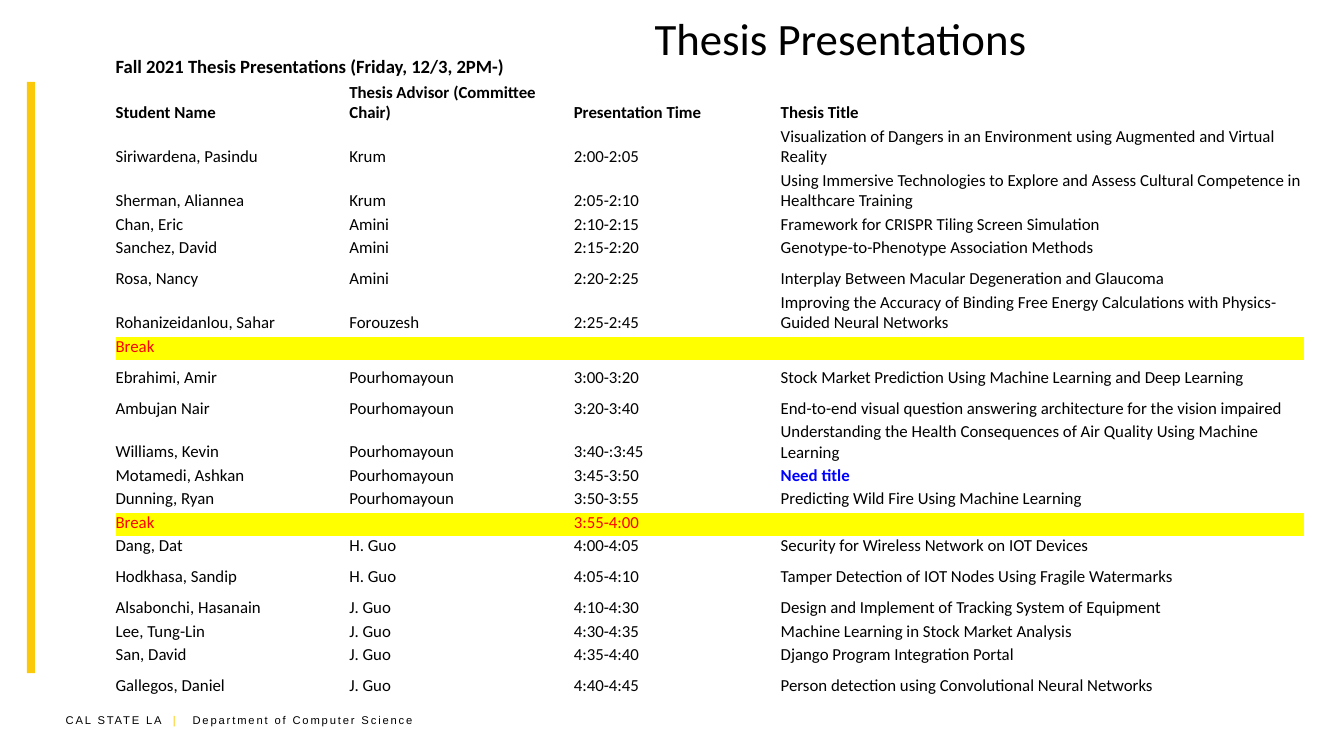
from lxml.etree import SubElement
from pptx import Presentation
from pptx.dml.color import RGBColor
from pptx.enum.shapes import MSO_SHAPE
from pptx.enum.text import MSO_ANCHOR, MSO_AUTO_SIZE, PP_ALIGN
from pptx.oxml.ns import qn
from pptx.util import Inches, Pt

BLACK, GOLD, YELLOW, RED, BLUE = "000000", "FCC90A", "FFFF00", "FF0000", "0000FF"
NO_STYLE_NO_GRID = "{2D5ABB26-0587-4C30-8999-92F81FD0307C}"
COLUMN_WIDTHS = [1.74, 1.67, 1.54, 3.89]
SHORT, MEDIUM, TALL = 0.13, 0.23, 0.33

CAPTION = "Fall 2021 Thesis Presentations (Friday, 12/3, 2PM-)"
HEADINGS = ["Student Name", "Thesis Advisor (Committee Chair)", "Presentation Time", "Thesis Title"]
MISSING_TITLE = "Need title"
# Row height, student, advisor, time, thesis title
SCHEDULE = [
    (MEDIUM, "Siriwardena, Pasindu", "Krum", "2:00-2:05",
     "Visualization of Dangers in an Environment using Augmented and Virtual Reality"),
    (TALL, "Sherman, Aliannea", "Krum", "2:05-2:10",
     "Using Immersive Technologies to Explore and Assess Cultural Competence in Healthcare Training"),
    (SHORT, "Chan, Eric", "Amini", "2:10-2:15", "Framework for CRISPR Tiling Screen Simulation"),
    (SHORT, "Sanchez, David", "Amini", "2:15-2:20", "Genotype-to-Phenotype Association Methods"),
    (MEDIUM, "Rosa, Nancy", "Amini", "2:20-2:25", "Interplay Between Macular Degeneration and Glaucoma"),
    (TALL, "Rohanizeidanlou, Sahar", "Forouzesh", "2:25-2:45",
     "Improving the Accuracy of Binding Free Energy Calculations with Physics-Guided Neural Networks"),
    (SHORT, "Break", "", "", ""),
    (MEDIUM, "Ebrahimi, Amir", "Pourhomayoun", "3:00-3:20",
     "Stock Market Prediction Using Machine Learning and Deep Learning"),
    (MEDIUM, "Ambujan Nair", "Pourhomayoun", "3:20-3:40",
     "End-to-end visual question answering architecture for the vision impaired"),
    (MEDIUM, "Williams, Kevin", "Pourhomayoun", "3:40-:3:45",
     "Understanding the Health Consequences of Air Quality Using Machine Learning"),
    (SHORT, "Motamedi, Ashkan", "Pourhomayoun", "3:45-3:50", MISSING_TITLE),
    (SHORT, "Dunning, Ryan", "Pourhomayoun", "3:50-3:55", "Predicting Wild Fire Using Machine Learning"),
    (SHORT, "Break", "", "3:55-4:00", ""),
    (SHORT, "Dang, Dat", "H. Guo", "4:00-4:05", "Security for Wireless Network on IOT Devices"),
    (MEDIUM, "Hodkhasa, Sandip", "H. Guo", "4:05-4:10",
     "Tamper Detection of IOT Nodes Using Fragile Watermarks"),
    (MEDIUM, "Alsabonchi, Hasanain", "J. Guo", "4:10-4:30",
     "Design and Implement of Tracking System of Equipment"),
    (SHORT, "Lee, Tung-Lin", "J. Guo", "4:30-4:35", "Machine Learning in Stock Market Analysis"),
    (SHORT, "San, David", "J. Guo", "4:35-4:40", "Django Program Integration Portal"),
    (MEDIUM, "Gallegos, Daniel", "J. Guo", "4:40-4:45",
     "Person detection using Convolutional Neural Networks"),
]


def color(hex_string):
    return RGBColor.from_string(hex_string)


def format_run(run, size, hex_string=BLACK, bold=False, name="Calibri"):
    font = run.font
    font.name, font.size, font.bold = name, Pt(size), bold
    font.color.rgb = color(hex_string)


def add_title(slide):
    title = slide.shapes.title
    title.left, title.top = Inches(4.77), Inches(0.03)
    title.width, title.height = Inches(3), Inches(0.5)
    frame = title.text_frame
    frame.text = "Thesis Presentations"
    frame.word_wrap = False
    frame.auto_size = MSO_AUTO_SIZE.NONE
    frame.vertical_anchor = MSO_ANCHOR.TOP
    paragraph = frame.paragraphs[0]
    paragraph.alignment = PP_ALIGN.LEFT
    format_run(paragraph.runs[0], 24)


def add_side_bar(slide):
    bar = slide.shapes.add_shape(
        MSO_SHAPE.RECTANGLE, Inches(0.2), Inches(0.61), Inches(0.06), Inches(4.4))
    bar.shadow.inherit = False
    bar.fill.solid()
    bar.fill.fore_color.rgb = color(GOLD)
    bar.line.fill.background()


def add_footer(slide):
    box = slide.shapes.add_textbox(Inches(0.39), Inches(5.26), Inches(2.92), Inches(0.2))
    box.text_frame.word_wrap = True
    paragraph = box.text_frame.paragraphs[0]
    for text, hex_string in [("CAL STATE LA ", BLACK), (" |   ", GOLD),
                             ("Department of Computer Science", BLACK)]:
        run = paragraph.add_run()
        run.text = text
        format_run(run, 6, hex_string, name="Arial")
        run.font._element.set("spc", "100")


def fill_cell(cell, text, size=9, hex_string=BLACK, bold=False, background=None):
    cell.margin_left = cell.margin_right = cell.margin_top = 0
    cell.margin_bottom = Pt(1.75)
    cell.vertical_anchor = MSO_ANCHOR.BOTTOM
    if background:
        cell.fill.solid()
        cell.fill.fore_color.rgb = color(background)
    else:
        cell.fill.background()
    paragraph = cell.text_frame.paragraphs[0]
    if text:
        paragraph.text = text
        format_run(paragraph.runs[0], size, hex_string, bold)
    else:
        # An empty cell keeps its row low only with a small end-of-paragraph size
        SubElement(paragraph._p, qn("a:endParaRPr")).set("sz", str(size * 100))


def add_schedule(slide):
    heights = [0.25, TALL] + [row[0] for row in SCHEDULE]
    frame = slide.shapes.add_table(
        len(heights), len(COLUMN_WIDTHS), Inches(0.86), Inches(0.36),
        Inches(sum(COLUMN_WIDTHS)), Inches(sum(heights)))
    table = frame.table
    table.first_row = table.horz_banding = False
    table._tbl.tblPr.find(qn("a:tableStyleId")).text = NO_STYLE_NO_GRID
    for column, width in zip(table.columns, COLUMN_WIDTHS):
        column.width = Inches(width)
    for row, height in zip(table.rows, heights):
        row.height = Inches(height)

    table.cell(0, 0).merge(table.cell(0, len(COLUMN_WIDTHS) - 1))
    fill_cell(table.cell(0, 0), CAPTION, size=10, bold=True)
    for index, heading in enumerate(HEADINGS):
        fill_cell(table.cell(1, index), heading, bold=True)
    for row_index, (_, *texts) in enumerate(SCHEDULE, start=2):
        is_break = texts[0] == "Break"
        for index, text in enumerate(texts):
            missing = text == MISSING_TITLE
            hex_string = RED if is_break else BLUE if missing else BLACK
            fill_cell(table.cell(row_index, index), text, hex_string=hex_string,
                      bold=missing, background=YELLOW if is_break else None)


def main():
    presentation = Presentation()
    presentation.slide_width = Inches(10)
    presentation.slide_height = Inches(10) * 9 // 16
    slide = presentation.slides.add_slide(presentation.slide_layouts[5])
    add_footer(slide)
    add_side_bar(slide)
    add_schedule(slide)
    add_title(slide)
    presentation.save("out.pptx")


if __name__ == "__main__":
    main()
